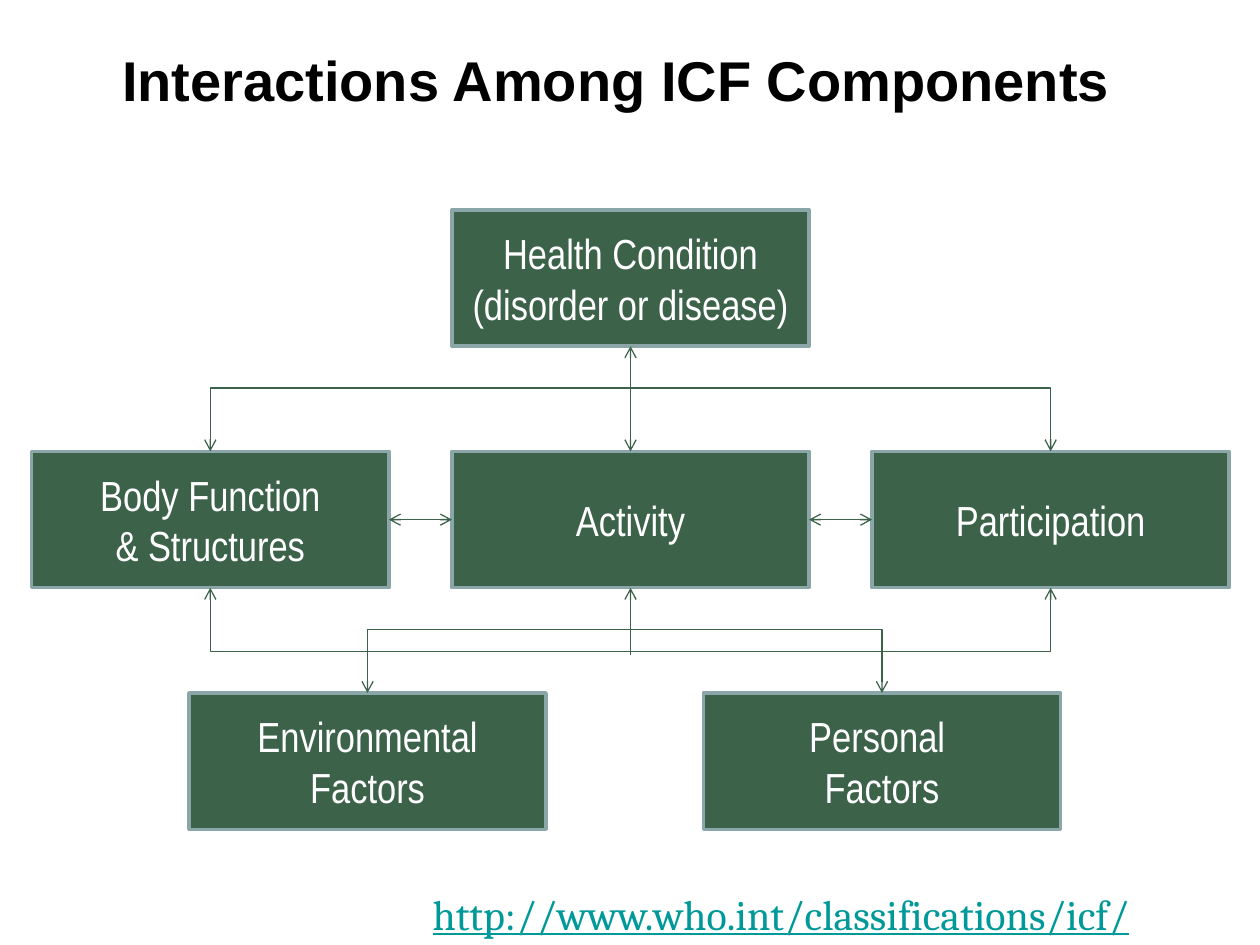
from lxml.etree import SubElement
from pptx import Presentation
from pptx.dml.color import RGBColor
from pptx.enum.shapes import MSO_CONNECTOR, MSO_SHAPE
from pptx.enum.text import MSO_ANCHOR, PP_ALIGN
from pptx.oxml.ns import qn
from pptx.util import Cm, Pt

COLORS = {
    "box": "3C624A",
    "border": "8AA6A8",
    "text": "FFFFFF",
    "title": "000000",
    "address": "009999",
}
BOX_WIDTH, BOX_HEIGHT = 7.2, 2.75
COLUMN_STEP, ROW_STEP = 8.47, 4.87
FACTOR_INDENT, FACTOR_STEP = 3.17, 10.37
BRACKET_DEPTH = Cm(1.28)
TOP, LEFT, BOTTOM, RIGHT = range(4)


def color(name):
    """Return the named colour."""
    return RGBColor.from_string(COLORS[name])


def set_font(font, name, size, color_name):
    """Set typeface, size and colour of a font."""
    font.name = name
    font.size = Pt(size)
    font.color.rgb = color(color_name)


def add_title(slide, left, top, width, height):
    """Place and format the slide title."""
    title = slide.shapes.title
    title.left, title.top, title.width, title.height = map(Cm, (left, top, width, height))
    frame = title.text_frame
    frame.text = "Interactions Among ICF Components"
    frame.vertical_anchor = MSO_ANCHOR.MIDDLE
    frame.margin_left = Cm(0.56)
    paragraph = frame.paragraphs[0]
    paragraph.alignment = PP_ALIGN.LEFT
    set_font(paragraph.font, "Arial", 32, "title")
    paragraph.font.bold = True


def add_box(slide, left, top, text):
    """Add one component box."""
    shape = slide.shapes.add_shape(
        MSO_SHAPE.RECTANGLE, Cm(left), Cm(top), Cm(BOX_WIDTH), Cm(BOX_HEIGHT)
    )
    shape.shadow.inherit = False
    shape.fill.solid()
    shape.fill.fore_color.rgb = color("box")
    shape.line.color.rgb = color("border")
    shape.line.width = Pt(2)
    frame = shape.text_frame
    frame.text = text
    frame.word_wrap = False
    frame.vertical_anchor = MSO_ANCHOR.MIDDLE
    for paragraph in frame.paragraphs:
        paragraph.alignment = PP_ALIGN.CENTER
        set_font(paragraph.font, "Arial Narrow", 24, "text")
    return shape


def style_arrow(shape, ends):
    """Give a line its colour, width and open arrowheads."""
    shape.line.color.rgb = color("box")
    shape.line.width = Pt(0.75)
    line = shape.line._get_or_add_ln()
    for end in ends:
        SubElement(line, qn(f"a:{end}"), type="arrow")


def add_arrow(slide, start, end):
    """Join two (shape, side) pairs with a double-headed arrow."""
    connector = slide.shapes.add_connector(MSO_CONNECTOR.STRAIGHT, 0, 0, 0, 0)
    connector.begin_connect(*start)
    connector.end_connect(*end)
    style_arrow(connector, ("headEnd", "tailEnd"))
    SubElement(connector._element.spPr, qn("a:effectLst"))


def add_stem(slide, shape, length):
    """Add an arrow that rises to the bottom of a shape."""
    center = shape.left + shape.width // 2
    bottom = shape.top + shape.height
    connector = slide.shapes.add_connector(
        MSO_CONNECTOR.STRAIGHT, center, bottom + length, center, bottom
    )
    connector.end_connect(shape, BOTTOM)
    style_arrow(connector, ("tailEnd",))
    SubElement(connector._element.spPr, qn("a:effectLst"))


def add_bracket(slide, first, last, side):
    """Link the tops or bottoms of two shapes with a square bracket."""
    start, end = (shape.left + shape.width // 2 for shape in (first, last))
    edge = first.top if side == TOP else first.top + first.height
    bar = edge - BRACKET_DEPTH if side == TOP else edge + BRACKET_DEPTH
    builder = slide.shapes.build_freeform(start, edge)
    builder.add_line_segments([(start, bar), (end, bar), (end, edge)], close=False)
    bracket = builder.convert_to_shape()
    bracket.shadow.inherit = False
    bracket.fill.background()
    style_arrow(bracket, ("headEnd", "tailEnd"))


def add_diagram(slide, left, top):
    """Draw the component boxes and their interactions."""
    health = add_box(slide, left + COLUMN_STEP, top, "Health Condition\n(disorder or disease)")
    body, activity, participation = [
        add_box(slide, left + column * COLUMN_STEP, top + ROW_STEP, text)
        for column, text in enumerate(
            ("Body Function\n& Structures", "Activity", "Participation")
        )
    ]
    environmental, personal = [
        add_box(slide, left + FACTOR_INDENT + column * FACTOR_STEP, top + 2 * ROW_STEP, text)
        for column, text in enumerate(("Environmental\nFactors", "Personal \nFactors"))
    ]
    add_arrow(slide, (health, BOTTOM), (activity, TOP))
    add_arrow(slide, (body, RIGHT), (activity, LEFT))
    add_arrow(slide, (activity, RIGHT), (participation, LEFT))
    add_stem(slide, activity, Cm(1.35))
    add_bracket(slide, body, participation, TOP)
    add_bracket(slide, body, participation, BOTTOM)
    add_bracket(slide, environmental, personal, TOP)


def add_address(slide, left, top, width, height):
    """Add the web address below the diagram."""
    box = slide.shapes.add_textbox(*map(Cm, (left, top, width, height)))
    frame = box.text_frame
    frame.word_wrap = True
    frame.text = "http://www.who.int/classifications/icf/en"
    font = frame.paragraphs[0].font
    set_font(font, "Cambria", 24, "address")
    font.underline = True


def main():
    """Build and save the presentation."""
    presentation = Presentation()
    presentation.slide_width, presentation.slide_height = Cm(25.4), Cm(19.05)
    slide = presentation.slides.add_slide(presentation.slide_layouts[5])
    add_title(slide, 1.9, 0.85, 21.8, 1.48)
    add_diagram(slide, 0.64, 4.23)
    add_address(slide, 8.47, 17.78, 15.24, 1.27)
    presentation.save("out.pptx")


if __name__ == "__main__":
    main()
